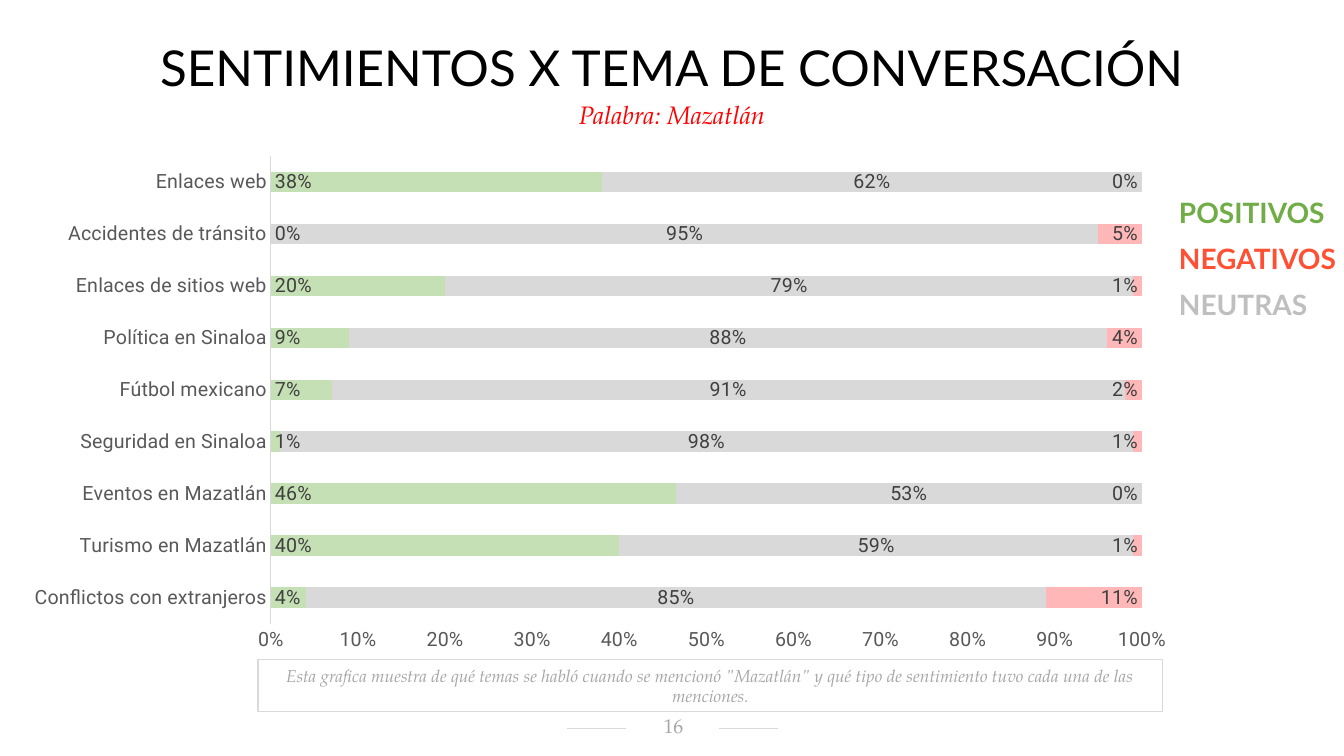
from lxml import etree
from pptx import Presentation
from pptx.chart.data import CategoryChartData
from pptx.dml.color import RGBColor
from pptx.enum.chart import XL_CHART_TYPE, XL_LABEL_POSITION, XL_TICK_MARK
from pptx.enum.shapes import MSO_CONNECTOR, MSO_SHAPE
from pptx.enum.text import MSO_ANCHOR, MSO_AUTO_SIZE, PP_ALIGN
from pptx.oxml import parse_xml
from pptx.oxml.ns import nsdecls, qn
from pptx.util import Emu, Pt

BAR_STACKED_100 = XL_CHART_TYPE.BAR_STACKED_100
IN_BASE = XL_LABEL_POSITION.INSIDE_BASE
CENTER_POS = XL_LABEL_POSITION.CENTER
IN_END = XL_LABEL_POSITION.INSIDE_END
NO_TICK = XL_TICK_MARK.NONE
STRAIGHT = MSO_CONNECTOR.STRAIGHT
RECT = MSO_SHAPE.RECTANGLE
TOP, MIDDLE = MSO_ANCHOR.TOP, MSO_ANCHOR.MIDDLE
LEFT, CENTER = PP_ALIGN.LEFT, PP_ALIGN.CENTER
NO_FIT = MSO_AUTO_SIZE.NONE

BLACK = RGBColor(0x00, 0x00, 0x00)
RED = RGBColor(0xFF, 0x00, 0x00)
GREEN = RGBColor(0x70, 0xAD, 0x47)
ORANGE = RGBColor(0xFF, 0x50, 0x33)
SILVER = RGBColor(0xBF, 0xBF, 0xBF)
GRAY = RGBColor(0xA6, 0xA6, 0xA6)
LIGHT_GRAY = RGBColor(0xD9, 0xD9, 0xD9)
AXIS_GRAY = RGBColor(0x59, 0x59, 0x59)
LABEL_GRAY = RGBColor(0x40, 0x40, 0x40)
PALE_GREEN = RGBColor(0xC5, 0xE0, 0xB4)
PALE_RED = RGBColor(0xFF, 0xB7, 0xB7)

SANS, SERIF, CHART_FONT = "Lato", "TeX Gyre Pagella", "Roboto"

TITLE = "SENTIMIENTOS X TEMA DE CONVERSACIÓN"
SUBTITLE = "Palabra: Mazatlán"
NOTE = ('Esta grafica muestra de qué temas se habló cuando se mencionó "Mazatlán" '
        "y qué tipo de sentimiento tuvo cada una de las menciones.")
PAGE = "16"
LEGEND = [("POSITIVOS", GREEN), ("NEGATIVOS", ORANGE), ("NEUTRAS", SILVER)]
TOPICS = [
    ("Conflictos con extranjeros", 0.04, 0.85, 0.11),
    ("Turismo en Mazatlán", 0.40, 0.59, 0.01),
    ("Eventos en Mazatlán", 0.46, 0.53, 0),
    ("Seguridad en Sinaloa", 0.01, 0.98, 0.01),
    ("Fútbol mexicano", 0.07, 0.91, 0.02),
    ("Política en Sinaloa", 0.09, 0.88, 0.04),
    ("Enlaces de sitios web", 0.20, 0.79, 0.01),
    ("Accidentes de tránsito", 0, 0.95, 0.05),
    ("Enlaces web", 0.38, 0.62, 0),
]
SERIES = [
    ("Series 1", PALE_GREEN, IN_BASE),
    ("Series 2", LIGHT_GRAY, CENTER_POS),
    ("Series 3", PALE_RED, IN_END),
]

SLIDE_W, SLIDE_H = 1344, 756
CHART_BOX = (11, 145, 1178, 517)
PLOT_BOX = (271, 156, 871, 468)
LEGEND_X, LEGEND_Y, LEGEND_W, LEGEND_H, LEGEND_STEP = 1163, 195, 217, 41, 46
RULE_Y, RULE_W, RULE_XS = 728, 59, (567, 719)


def px(n):
    return Emu(round(n * 914400 / 100.8))


def box(*lengths):
    return [px(n) for n in lengths]


def write(sp, text, font, size, color, align=CENTER, anchor=TOP,
          bold=False, italic=False, insets=(10, 5, 10, 5)):
    tf = sp.text_frame
    tf.word_wrap = True
    tf.auto_size = NO_FIT
    tf.vertical_anchor = anchor
    tf.margin_left, tf.margin_top, tf.margin_right, tf.margin_bottom = box(*insets)
    p = tf.paragraphs[0]
    p.alignment = align
    r = p.add_run()
    r.text = text
    style(r.font, font, size, color)
    r.font.bold = bold
    r.font.italic = italic
    return p


def style(f, name, size, color):
    f.name = name
    f.size = Pt(size)
    f.color.rgb = color


def add_rules(s):
    for x in RULE_XS:
        rule = s.shapes.add_connector(STRAIGHT, *box(x, RULE_Y, x + RULE_W, RULE_Y))
        rule.line.color.rgb = LIGHT_GRAY
        rule.line.width = Pt(0.5)
        etree.SubElement(rule._element.spPr, qn("a:effectLst"))


def add_note(s):
    sp = s.shapes.add_shape(RECT, *box(258, 660, 905, 52))
    sp.shadow.inherit = False
    sp.fill.background()
    sp.line.color.rgb = LIGHT_GRAY
    sp.line.width = Pt(0.75)
    write(sp, NOTE, SERIF, 12.3, GRAY, italic=True)


def add_topic_chart(s):
    data = CategoryChartData(number_format="0%")
    names, *columns = zip(*TOPICS)
    data.categories = names
    for (name, _, _), values in zip(SERIES, columns):
        data.add_series(name, values)
    chart = s.shapes.add_chart(BAR_STACKED_100, *box(*CHART_BOX), data).chart
    chart.has_legend = False
    chart.has_title = False
    style(chart.font, CHART_FONT, 14, AXIS_GRAY)

    for axis in (chart.category_axis, chart.value_axis):
        axis.major_tick_mark = NO_TICK
        axis.minor_tick_mark = NO_TICK
        axis.has_major_gridlines = False
        style(axis.tick_labels.font, CHART_FONT, 14, AXIS_GRAY)
    chart.category_axis.format.line.color.rgb = LIGHT_GRAY
    chart.category_axis.format.line.width = Pt(0.75)
    chart.value_axis.format.line.fill.background()
    chart.value_axis.minimum_scale = 0
    chart.value_axis.maximum_scale = 1
    chart.value_axis.major_unit = 0.1
    chart.value_axis.tick_labels.number_format = "0%"
    chart.value_axis.tick_labels.number_format_is_linked = False

    plot = chart.plots[0]
    plot.vary_by_categories = False
    plot.gap_width = 150
    plot.overlap = 100
    for series, (_, color, position) in zip(plot.series, SERIES):
        series.format.fill.solid()
        series.format.fill.fore_color.rgb = color
        labels = series.data_labels
        labels.show_value = True
        labels.position = position
        labels.number_format = "0%"
        labels.number_format_is_linked = False
        style(labels.font, CHART_FONT, 14, LABEL_GRAY)
    set_plot_box(chart)


def set_plot_box(chart):
    left, top, width, height = CHART_BOX
    x, y, w, h = PLOT_BOX
    shares = {"x": (x - left) / width, "y": (y - top) / height,
              "w": w / width, "h": h / height}
    modes = "".join(f'<c:{k}Mode val="edge"/>' for k in "xy")
    values = "".join(f'<c:{k} val="{v:.4f}"/>' for k, v in shares.items())
    area = chart._chartSpace.chart.plotArea
    for old in area.findall(qn("c:layout")):
        area.remove(old)
    area.insert(0, parse_xml(
        f'<c:layout {nsdecls("c")}><c:manualLayout><c:layoutTarget val="inner"/>'
        f"{modes}{values}</c:manualLayout></c:layout>"))


def add_legend(s):
    for i, (text, color) in enumerate(LEGEND):
        sp = s.shapes.add_textbox(
            *box(LEGEND_X, LEGEND_Y + i * LEGEND_STEP, LEGEND_W, LEGEND_H))
        p = write(sp, text, SANS, 20, color, LEFT, MIDDLE, bold=True,
                  insets=(16, 7, 14, 7))
        p.line_spacing = 0.8


def main():
    prs = Presentation()
    prs.slide_width, prs.slide_height = box(SLIDE_W, SLIDE_H)
    s = prs.slides.add_slide(prs.slide_layouts[5])
    title = s.shapes.title
    title.left, title.top, title.width, title.height = box(0, 32, SLIDE_W, 71)
    write(title, TITLE, SANS, 35.3, BLACK)

    add_rules(s)
    page = s.shapes.add_textbox(*box(625, 716, 95, 23))
    write(page, PAGE, SERIF, 14.1, GRAY, anchor=MIDDLE, insets=(12, 2, 10, 5))
    add_note(s)
    add_topic_chart(s)
    subtitle = s.shapes.add_textbox(*box(336, 94, 672, 40))
    write(subtitle, SUBTITLE, SERIF, 18, RED, italic=True)
    add_legend(s)
    prs.save("out.pptx")


if __name__ == "__main__":
    main()
